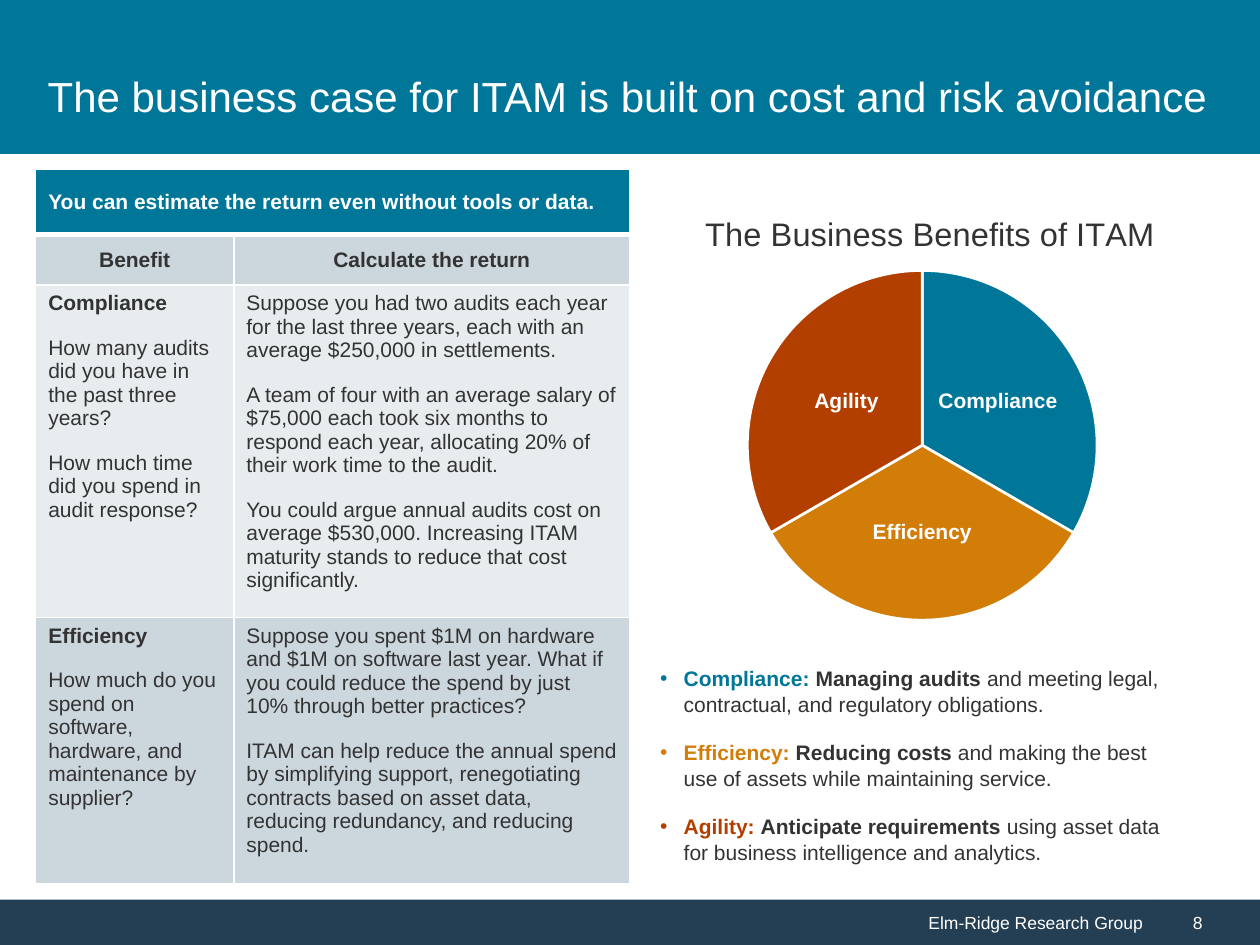
from collections import namedtuple
from dataclasses import dataclass

from lxml.etree import SubElement
from pptx import Presentation
from pptx.chart.data import CategoryChartData
from pptx.dml.color import RGBColor
from pptx.enum.chart import XL_CHART_TYPE, XL_LABEL_POSITION
from pptx.enum.shapes import MSO_SHAPE
from pptx.enum.text import MSO_ANCHOR, MSO_AUTO_SIZE, PP_ALIGN
from pptx.oxml.ns import qn
from pptx.util import Pt

Box = namedtuple("Box", "left top width height")


@dataclass(frozen=True)
class Theme:
    """Colours, type sizes and font of the deck."""
    face: str = "Arial"
    white: str = "FFFFFF"
    ink: str = "333333"
    teal: str = "007698"
    gold: str = "D17D08"
    rust: str = "B23F00"
    navy: str = "243F54"
    mist: str = "CCD6DD"
    pale: str = "E7ECEF"
    head: float = 24
    label: float = 18.6
    body: float = 12
    small: float = 10


THEME = Theme()
TINTS = {"Compliance": THEME.teal, "Efficiency": THEME.gold, "Agility": THEME.rust}
NOTES = [
    ("Compliance", "Managing audits",
     " and meeting legal, contractual, and regulatory obligations."),
    ("Efficiency", "Reducing costs",
     " and making the best use of assets while maintaining service."),
    ("Agility", "Anticipate requirements",
     " using asset data for business intelligence and analytics."),
]
CASES = [
    (["Compliance",
      "How many audits did you have in the past three years?",
      "How much time did you spend in audit response?"],
     ["Suppose you had two audits each year for the last three years, each with an "
      "average $250,000 in settlements.",
      "A team of four with an average salary of $75,000 each took six months to respond "
      "each year, allocating 20% of their work time to the audit.",
      "You could argue annual audits cost on average $530,000. Increasing ITAM maturity "
      "stands to reduce that cost significantly."]),
    (["Efficiency",
      "How much do you spend on software, hardware, and maintenance by supplier?"],
     ["Suppose you spent $1M on hardware and $1M on software last year. What if you could "
      "reduce the spend by just 10% through better practices?",
      "ITAM can help reduce the annual spend by simplifying support, renegotiating "
      "contracts based on asset data, reducing redundancy, and reducing spend."]),
]


def style(font, size, tint, bold=False):
    """Set face, size, colour and weight of a font."""
    font.name, font.size, font.bold = THEME.face, Pt(size), bold
    font.color.rgb = RGBColor.from_string(tint)


def paint(fill, tint):
    """Fill with one solid colour."""
    fill.solid()
    fill.fore_color.rgb = RGBColor.from_string(tint)


def place(shape, box):
    """Move and size a shape to a box."""
    shape.left, shape.top, shape.width, shape.height = map(Pt, box)


def add_bar(slide, box, tint):
    """Add a plain filled bar."""
    bar = slide.shapes.add_shape(MSO_SHAPE.RECTANGLE, *map(Pt, box))
    bar.shadow.inherit = False
    paint(bar.fill, tint)
    bar.line.fill.background()
    return bar


def add_head(slide, box, text):
    """Place the title on its band."""
    add_bar(slide, box, THEME.teal)
    title = slide.shapes.title
    slide.shapes._spTree.append(title._element)
    place(title, Box(box.left + 20, box.top + 20, box.width - 40, box.height - 19))
    frame = title.text_frame
    frame.text = text
    frame.auto_size = MSO_AUTO_SIZE.NONE
    frame.vertical_anchor = MSO_ANCHOR.MIDDLE
    line = frame.paragraphs[0]
    line.alignment = PP_ALIGN.LEFT
    style(line.font, THEME.head, THEME.white)


def add_foot(slide, box, name, page):
    """Place the footer name and page number."""
    split = box.width - 60
    parts = [(name, 0, split, PP_ALIGN.RIGHT), (page, split, 60, PP_ALIGN.LEFT)]
    for text, left, width, align in parts:
        bar = add_bar(slide, Box(box.left + left, box.top, width, box.height), THEME.navy)
        frame = bar.text_frame
        frame.margin_left = Pt(21.6)
        frame.vertical_anchor = MSO_ANCHOR.MIDDLE
        frame.text = text
        line = frame.paragraphs[0]
        line.alignment = align
        style(line.font, THEME.small, THEME.white)


def fill_cell(cell, lines, tint, ink=THEME.ink, lead=False, align=PP_ALIGN.LEFT, base=1):
    """Write, border and fill one table cell."""
    props = cell._tc.get_or_add_tcPr()
    for side in "LRTB":
        edge = SubElement(props, qn(f"a:ln{side}"),
                          w=str(Pt(base if side == "B" else 1)))
        solid = SubElement(edge, qn("a:solidFill"))
        SubElement(solid, qn("a:srgbClr"), val=THEME.white)
    paint(cell.fill, tint)
    cell.text = "\n".join(lines)
    for rank, line in enumerate(cell.text_frame.paragraphs):
        line.alignment = align
        line.space_before = Pt(6 if rank else 0)
        line.space_after = Pt(6 if len(lines) > 1 else 0)
        style(line.font, THEME.body, ink, lead and rank == 0)


def add_cases(slide, box):
    """Place the table of benefits and returns."""
    grid = slide.shapes.add_table(4, 2, *map(Pt, box)).table
    grid.first_row = grid.horz_banding = False
    for col, part in zip(grid.columns, (1, 2)):
        col.width = Pt(round(box.width * part / 3, 2))
    for row, height in zip(grid.rows, (37, 29, 190, 152)):
        row.height = Pt(height)
    grid.cell(0, 0).merge(grid.cell(0, 1))
    fill_cell(grid.cell(0, 0), ["You can estimate the return even without tools or data."],
              THEME.teal, THEME.white, True, base=3)
    for col, text in enumerate(("Benefit", "Calculate the return")):
        fill_cell(grid.cell(1, col), [text], THEME.mist, lead=True, align=PP_ALIGN.CENTER)
        for row in (0, 1):
            grid.cell(row, col).vertical_anchor = MSO_ANCHOR.MIDDLE
    for row, (case, tint) in enumerate(zip(CASES, (THEME.pale, THEME.mist)), 2):
        for col, lines in enumerate(case):
            fill_cell(grid.cell(row, col), lines, tint, lead=col == 0)


def set_spot(part, rank, **spots):
    """Give a chart part a fixed layout in shares of the chart."""
    for old in part.findall(qn("c:layout")):
        part.remove(old)
    plan = SubElement(part, qn("c:layout"))
    part.insert(rank, plan)
    spot = SubElement(plan, qn("c:manualLayout"))
    if "w" in spots:
        SubElement(spot, qn("c:layoutTarget"), val="inner")
    for key in "xy":
        SubElement(spot, qn(f"c:{key}Mode"), val="edge")
    for key, share in spots.items():
        SubElement(spot, qn(f"c:{key}"), val=str(share))


def add_pie(slide, box):
    """Place the pie of business benefits."""
    data = CategoryChartData()
    data.categories = list(TINTS)
    data.add_series("Series 1", [33] * len(TINTS))
    chart = slide.shapes.add_chart(XL_CHART_TYPE.PIE, *map(Pt, box), data).chart
    style(chart.font, THEME.small, THEME.ink)
    chart.has_legend = False
    chart.has_title = True
    frame = chart.chart_title.text_frame
    frame.text = "The Business Benefits of ITAM"
    style(frame.paragraphs[0].font, THEME.label, THEME.ink)
    set_spot(chart.chart_title._element, 1, x=0.17, y=0.06)
    set_spot(chart._chartSpace.chart.plotArea, 0, x=0.24, y=0.2, w=0.52, h=0.76)
    plot = chart.plots[0]
    plot.vary_by_categories = True
    for rank, tint in enumerate(TINTS.values()):
        form = plot.series[0].points[rank].format
        paint(form.fill, tint)
        paint(form.line.fill, THEME.white)
        form.line.width = Pt(1.5)
    tags = plot.series[0].data_labels
    tags.show_category_name, tags.show_value = True, False
    tags.show_percentage = False
    tags.position = XL_LABEL_POSITION.CENTER
    style(tags.font, THEME.body, THEME.white, True)


def add_notes(slide, box):
    """Place the list that explains each benefit."""
    body = slide.placeholders[1]
    place(body, box)
    frame = body.text_frame
    frame.auto_size = MSO_AUTO_SIZE.NONE
    for rank, (name, gain, rest) in enumerate(NOTES):
        line = frame.add_paragraph() if rank else frame.paragraphs[0]
        props = line._p.get_or_add_pPr()
        props.set("marL", str(Pt(13.5)))
        props.set("indent", str(-Pt(13.5)))
        SubElement(props, qn("a:buChar"), char="•")
        line.space_before, line.space_after = Pt(6 if rank else 0), Pt(6)
        line.line_spacing = 1.05
        parts = [(f"{name}: ", TINTS[name], True), (gain, THEME.ink, True),
                 (rest, THEME.ink, False)]
        for text, tint, bold in parts:
            run = line.add_run()
            run.text = text
            style(run.font, THEME.body, tint, bold)


def main():
    """Build the slide and save it."""
    deck = Presentation()
    deck.slide_width, deck.slide_height = Pt(720), Pt(540)
    slide = deck.slides.add_slide(deck.slide_layouts[1])
    add_foot(slide, Box(0, 514, 720, 26), "Elm-Ridge Research Group", "8")
    add_head(slide, Box(0, 0, 720, 88), "The business case for ITAM is built on cost and risk avoidance")
    add_pie(slide, Box(334, 102, 386, 263))
    add_notes(slide, Box(370, 376, 314, 119))
    add_cases(slide, Box(20.4, 97, 339.6, 408))
    deck.save("out.pptx")


if __name__ == "__main__":
    main()
